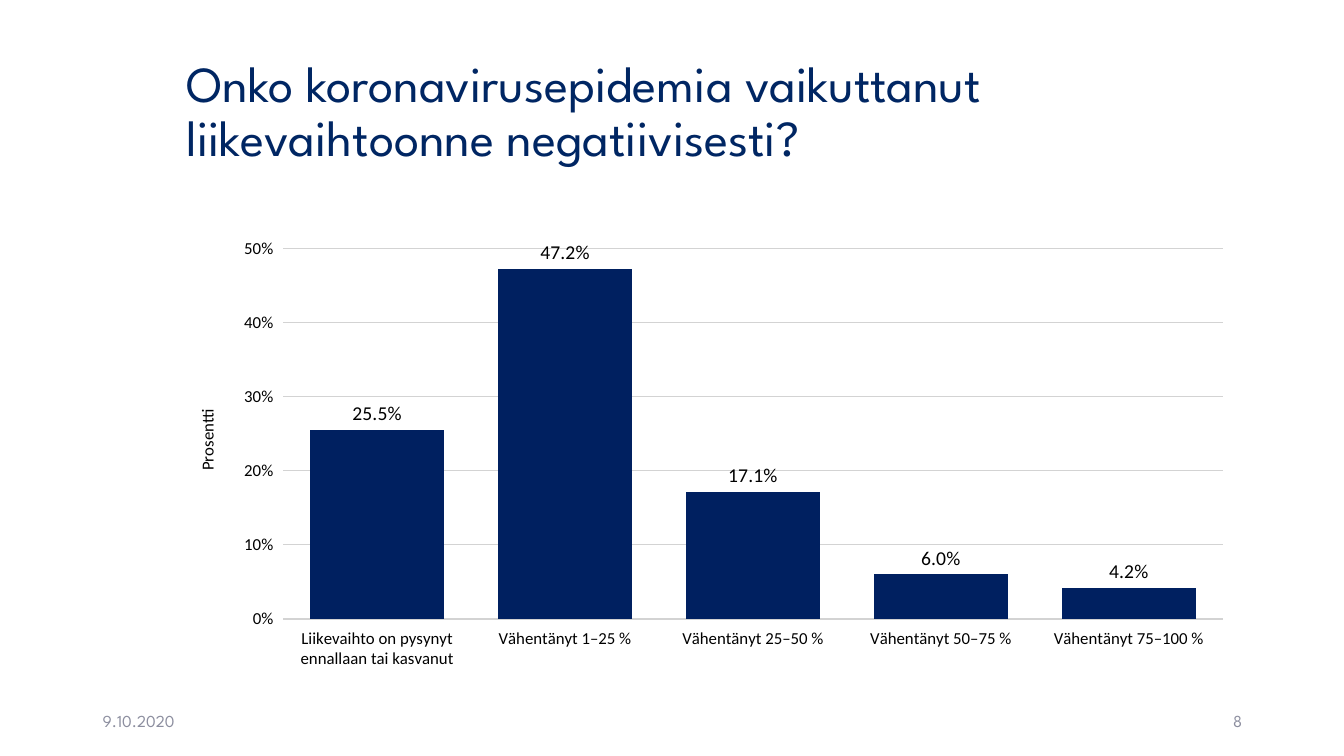
from dataclasses import dataclass

from lxml.etree import SubElement
from pptx import Presentation
from pptx.chart.data import CategoryChartData
from pptx.dml.color import RGBColor
from pptx.enum.chart import XL_CHART_TYPE, XL_LABEL_POSITION, XL_TICK_MARK
from pptx.enum.text import MSO_ANCHOR, MSO_AUTO_SIZE, PP_ALIGN
from pptx.oxml.ns import qn
from pptx.util import Pt


@dataclass(frozen=True)
class Theme:
    """Colours, fonts and type sizes of the slide."""

    title: str = "002663"
    bar: str = "002060"
    note: str = "8C8E9F"
    ink: str = "000000"
    grid: str = "D3D3D3"
    paper: str = "FFFFFF"
    head: str = "League Spartan"
    body: str = "Calibri"
    big: int = 36
    label: int = 14
    small: int = 12


class Deck:
    """Draws styled elements on the current slide, 100 px to the inch."""

    SCALE = 9144

    def __init__(self, theme, width, height):
        self.theme = theme
        self.show = Presentation()
        self.show.slide_width = width * self.SCALE
        self.show.slide_height = height * self.SCALE
        self.slide = self.show.slides.add_slide(self.show.slide_layouts[5])

    def box(self, *sides):
        """Turn px into EMU."""
        return [side * self.SCALE for side in sides]

    def style(self, font, face, size, color):
        """Set the face, size and colour of a font."""
        font.name, font.size = face, Pt(size)
        font.color.rgb = RGBColor.from_string(color)

    def text(self, frame, words, size, color, align):
        """Fill a text frame with one run."""
        frame.word_wrap = True
        frame.auto_size = MSO_AUTO_SIZE.NONE
        frame.vertical_anchor = MSO_ANCHOR.MIDDLE
        line = frame.paragraphs[0]
        line.alignment = align
        run = line.add_run()
        run.text = words
        self.style(run.font, self.theme.head, size, color)
        return line

    def title(self, words, *sides):
        """Move and fill the title placeholder."""
        shape = self.slide.shapes.title
        shape.left, shape.top, shape.width, shape.height = self.box(*sides)
        line = self.text(shape.text_frame, words, self.theme.big,
                         self.theme.title, PP_ALIGN.LEFT)
        line.line_spacing = 0.9

    def note(self, words, align, *sides):
        """Add a footer text."""
        shape = self.slide.shapes.add_textbox(*self.box(*sides))
        self.text(shape.text_frame, words, self.theme.small,
                  self.theme.note, align)

    def axis(self, axis):
        """Style the labels of an axis and hide its line."""
        axis.major_tick_mark = XL_TICK_MARK.OUTSIDE
        axis.minor_tick_mark = XL_TICK_MARK.NONE
        axis.format.line.fill.background()
        self.style(axis.tick_labels.font, self.theme.body,
                   self.theme.small, self.theme.ink)

    def place(self, chart, **parts):
        """Fix the inner plot area as shares of the chart."""
        area = chart.plots[0]._element.getparent()
        for old in area.findall(qn("c:layout")):
            area.remove(old)
        layout = SubElement(area, qn("c:layout"))
        area.insert(0, layout)
        manual = SubElement(layout, qn("c:manualLayout"))
        values = {"layoutTarget": "inner", "xMode": "edge", "yMode": "edge"}
        for name, value in (values | parts).items():
            SubElement(manual, qn(f"c:{name}")).set("val", str(value))
        fill = SubElement(SubElement(area, qn("c:spPr")), qn("a:solidFill"))
        SubElement(fill, qn("a:srgbClr")).set("val", self.theme.paper)

    def chart(self, name, rows, unit, *sides):
        """Add a column chart of shares."""
        theme = self.theme
        data = CategoryChartData(number_format="0.0%")
        data.categories = list(rows)
        data.add_series(name, list(rows.values()))
        chart = self.slide.shapes.add_chart(
            XL_CHART_TYPE.COLUMN_CLUSTERED, *self.box(*sides), data).chart
        chart.has_legend = chart.has_title = False
        self.style(chart.font, theme.body, theme.small, theme.ink)

        scale = chart.value_axis
        for axis in (chart.category_axis, scale):
            self.axis(axis)
        scale.minimum_scale, scale.maximum_scale = 0, 0.55
        scale.major_unit = 0.1
        scale.tick_labels.number_format = "0%"
        scale.tick_labels.number_format_is_linked = False
        grid = scale.major_gridlines.format.line
        grid.width = Pt(1)
        grid.color.rgb = RGBColor.from_string(theme.grid)
        run = scale.axis_title.text_frame.paragraphs[0].add_run()
        run.text = unit
        self.style(run.font, theme.body, theme.small, theme.ink)
        run.font.bold = False

        plot = chart.plots[0]
        plot.gap_width = 40
        plot.vary_by_categories = False
        fill = plot.series[0].format.fill
        fill.solid()
        fill.fore_color.rgb = RGBColor.from_string(theme.bar)
        plot.has_data_labels = True
        labels = plot.data_labels
        labels.show_value = True
        labels.position = XL_LABEL_POSITION.OUTSIDE_END
        labels.number_format = "0.0%"
        labels.number_format_is_linked = False
        self.style(labels.font, theme.body, theme.label, theme.ink)
        self.place(chart, x=0.1, y=0.02, w=0.88, h=0.85)

    def save(self):
        """Save the file."""
        self.show.save("out.pptx")


def main():
    """Build the slide."""
    deck = Deck(Theme(), 1333, 750)
    deck.title("Onko koronavirusepidemia vaikuttanut liikevaihtoonne "
               "negatiivisesti?", 175, 40, 1059, 145)
    deck.note("9.10.2020", PP_ALIGN.LEFT, 92, 695, 300, 40)
    deck.note("8", PP_ALIGN.RIGHT, 942, 695, 300, 40)
    shares = {
        "Liikevaihto on pysynyt ennallaan tai kasvanut": 0.255,
        "Vähentänyt 1–25 %": 0.472,
        "Vähentänyt 25–50 %": 0.171,
        "Vähentänyt 50–75 %": 0.06,
        "Vähentänyt 75–100 %": 0.042,
    }
    deck.chart("Series 1", shares, "Prosentti", 175, 200, 1059, 476)
    deck.save()


if __name__ == "__main__":
    main()
